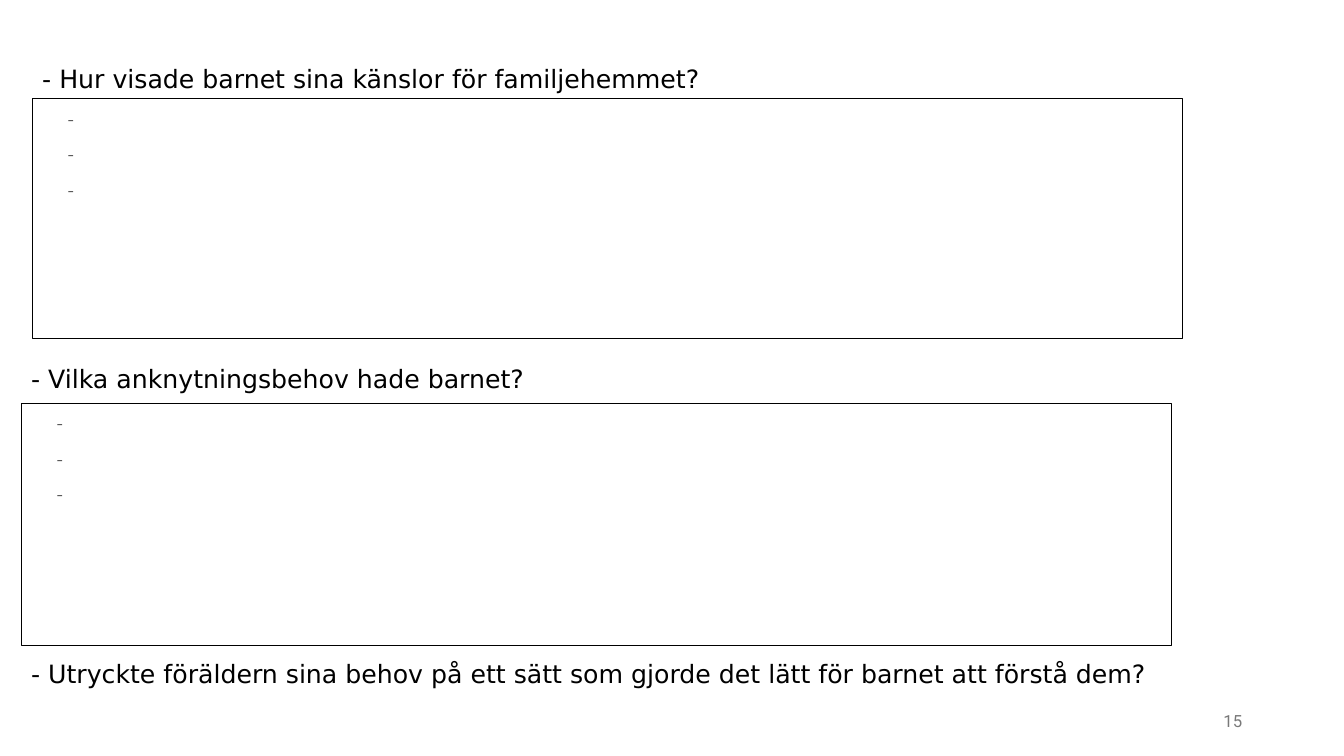
from dataclasses import dataclass

from pptx import Presentation
from pptx.dml.color import RGBColor
from pptx.enum.shapes import MSO_SHAPE as Shape
from pptx.enum.text import MSO_ANCHOR as Anchor, MSO_AUTO_SIZE as Fit, PP_ALIGN as Align
from pptx.util import Inches, Pt

BLACK, WHITE, GREY, PALE = "000000", "FFFFFF", "595959", "797979"


@dataclass
class Label:
    text: str
    left: float
    top: float
    width: float
    after: int = 10
    font: str = "DejaVu Sans"
    size: int = 18
    hue: str = BLACK
    align: Align = Align.LEFT
    anchor: Anchor = Anchor.TOP
    fit: Fit = Fit.SHAPE_TO_FIT_TEXT


@dataclass
class Box:
    left: float
    top: float
    height: float
    rows: int = 3


LABELS = [
    Label("- Hur visade barnet sina känslor för familjehemmet?", 0.32, 0.58, 11.81, after=0),
    Label("- Vilka anknytningsbehov hade barnet?", 0.21, 3.56, 10.39),
    Label("- Utryckte föräldern sina behov på ett sätt som gjorde det lätt för barnet att förstå dem?",
          0.21, 6.48, 11.66),
    Label("15", 9.42, 6.95, 3, 0, "Roboto", 12, PALE, Align.RIGHT, Anchor.MIDDLE, Fit.NONE),
]
BOXES = [Box(0.32, 0.98, 2.38), Box(0.21, 4, 2.4)]


def color(code: str) -> RGBColor:
    return RGBColor.from_string(code)


def style(par, font: str, size: int, hue: str, align: Align, after: int) -> None:
    par.font.name = font
    par.font.size = Pt(size)
    par.font.color.rgb = color(hue)
    par.alignment = align
    par.space_after = Pt(after)


def add_label(slide, item: Label) -> None:
    shape = slide.shapes.add_textbox(
        Inches(item.left), Inches(item.top), Inches(item.width), Inches(0.4))
    frame = shape.text_frame
    frame.word_wrap = True
    frame.auto_size = item.fit
    frame.vertical_anchor = item.anchor
    par = frame.paragraphs[0]
    par.text = item.text
    style(par, item.font, item.size, item.hue, item.align, item.after)


def add_box(slide, item: Box) -> None:
    shape = slide.shapes.add_shape(
        Shape.RECTANGLE, Inches(item.left), Inches(item.top), Inches(11.41), Inches(item.height))
    shape.shadow.inherit = False
    shape.fill.solid()
    shape.fill.fore_color.rgb = color(WHITE)
    shape.line.color.rgb = color(BLACK)
    shape.line.width = Pt(0.75)
    frame = shape.text_frame
    frame.word_wrap = True
    frame.vertical_anchor = Anchor.TOP
    frame.text = "\n".join(["-"] * item.rows)
    for par in frame.paragraphs:
        style(par, "Cambria", 15, GREY, Align.LEFT, 6)
        par.line_spacing = 1.07
        # Hanging indent
        props = par._p.get_or_add_pPr()
        props.set("marL", str(Inches(0.5)))
        props.set("indent", str(Inches(-0.25)))


def main() -> None:
    deck = Presentation()
    deck.slide_width, deck.slide_height = Inches(13.33), Inches(7.5)
    slide = deck.slides.add_slide(deck.slide_layouts[6])

    # Answer boxes
    for box in BOXES:
        add_box(slide, box)

    # Questions and page number
    for label in LABELS:
        add_label(slide, label)

    deck.save("out.pptx")


if __name__ == "__main__":
    main()
